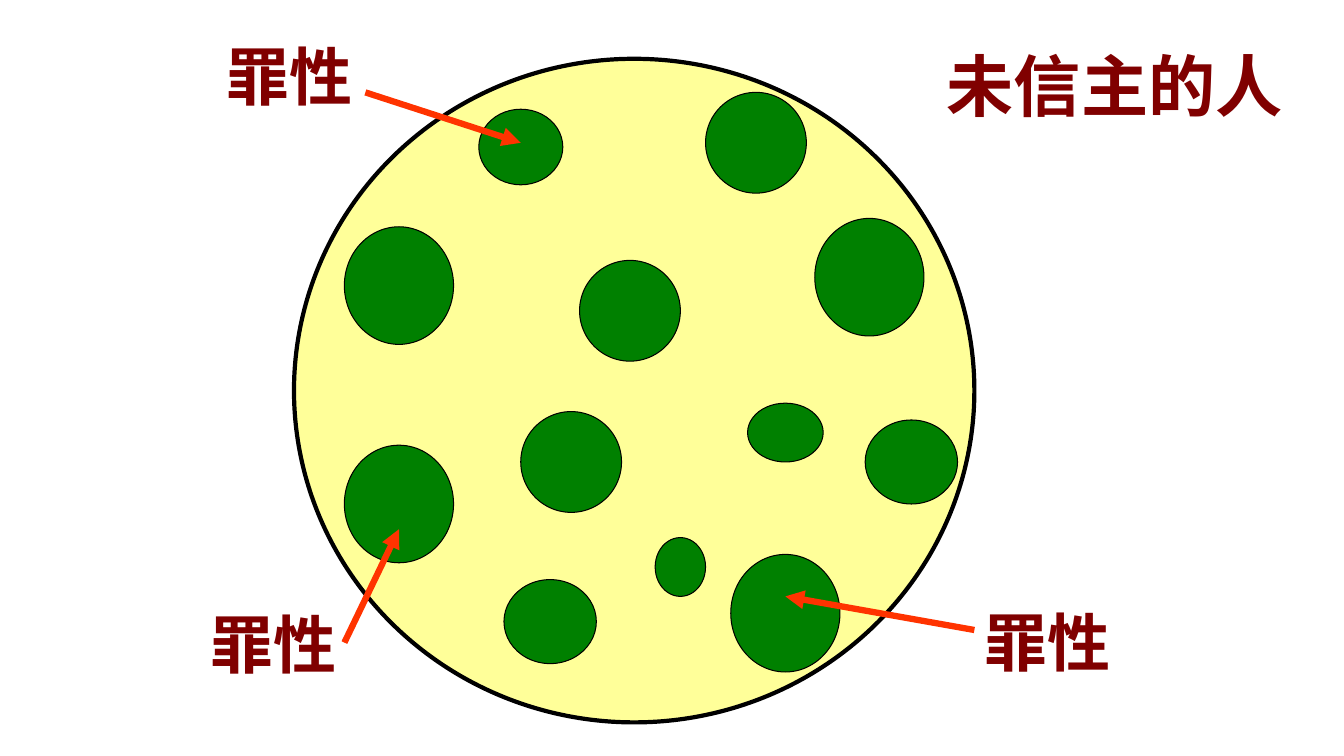
"""Build a slide showing the sinful nature spread through an unbeliever."""
from lxml.etree import SubElement
from pptx import Presentation
from pptx.dml.color import RGBColor
from pptx.enum.shapes import MSO_CONNECTOR, MSO_SHAPE
from pptx.enum.text import MSO_ANCHOR, MSO_AUTO_SIZE, PP_ALIGN
from pptx.oxml.ns import qn
from pptx.util import Pt

FONT = "Noto Sans CJK SC"
MAROON, GREEN, CREAM, RED, BLACK = "800000", "008000", "FFFF99", "FF3300", "000000"

SIN_SPOTS = [
    (246, 162, 78, 84),
    (246, 318, 78, 84),
    (342, 78, 60, 54),
    (618, 300, 66, 60),
    (522, 396, 78, 84),
    (582, 156, 78, 84),
    (504, 66, 72, 72),
    (534, 288, 54, 42),
    (414, 186, 72, 72),
    (372, 294, 72, 72),
    (468, 384, 36, 42),
    (360, 414, 66, 60),
]
SIN_LABELS = [
    ((155, 22.5), (261, 66), (372, 102)),
    ((696, 427), (696, 450), (561, 426)),
    ((143, 428.5), (246, 459), (285, 378)),
]


def color(hex_string):
    return RGBColor.from_string(hex_string)


def add_circle(slide, left, top, width, height, fill, line_width):
    circle = slide.shapes.add_shape(
        MSO_SHAPE.OVAL, Pt(left), Pt(top), Pt(width), Pt(height))
    circle.shadow.inherit = False
    circle.fill.solid()
    circle.fill.fore_color.rgb = color(fill)
    circle.line.color.rgb = color(BLACK)
    circle.line.width = Pt(line_width)


def write_text(frame, text, size, wrap):
    frame.word_wrap = wrap
    frame.auto_size = MSO_AUTO_SIZE.NONE
    frame.vertical_anchor = MSO_ANCHOR.MIDDLE
    paragraph = frame.paragraphs[0]
    paragraph.alignment = PP_ALIGN.LEFT
    run = paragraph.add_run()
    run.text = text
    run.font.size = Pt(size)
    run.font.bold = True
    run.font.name = FONT
    run.font.color.rgb = color(MAROON)
    SubElement(run.font._element, qn("a:ea"), typeface=FONT)


def add_title(slide, text, left, top, width, height):
    title = slide.shapes.title
    title.left, title.top = Pt(left), Pt(top)
    title.width, title.height = Pt(width), Pt(height)
    write_text(title.text_frame, text, 48, True)


def add_label(slide, text, left, top):
    label = slide.shapes.add_textbox(Pt(left), Pt(top), Pt(106), Pt(62))
    write_text(label.text_frame, text, 45, False)


def add_arrow(slide, start, end):
    arrow = slide.shapes.add_connector(
        MSO_CONNECTOR.STRAIGHT, *(Pt(value) for value in start + end))
    arrow.line.color.rgb = color(RED)
    arrow.line.width = Pt(4.5)
    SubElement(arrow.line._get_or_add_ln(), qn("a:tailEnd"), type="triangle")
    SubElement(arrow._element.spPr, qn("a:effectLst"))


def main():
    deck = Presentation()
    deck.slide_width, deck.slide_height = Pt(960), Pt(540)
    slide = deck.slides.add_slide(deck.slide_layouts[5])

    add_title(slide, "未信主的人", 669, 28, 258, 65.5)
    add_circle(slide, 210, 42, 486, 474, CREAM, 3)
    for spot in SIN_SPOTS:
        add_circle(slide, *spot, GREEN, 0.75)
    for corner, start, end in SIN_LABELS:
        add_label(slide, "罪性", *corner)
        add_arrow(slide, start, end)

    deck.save("out.pptx")


if __name__ == "__main__":
    main()
